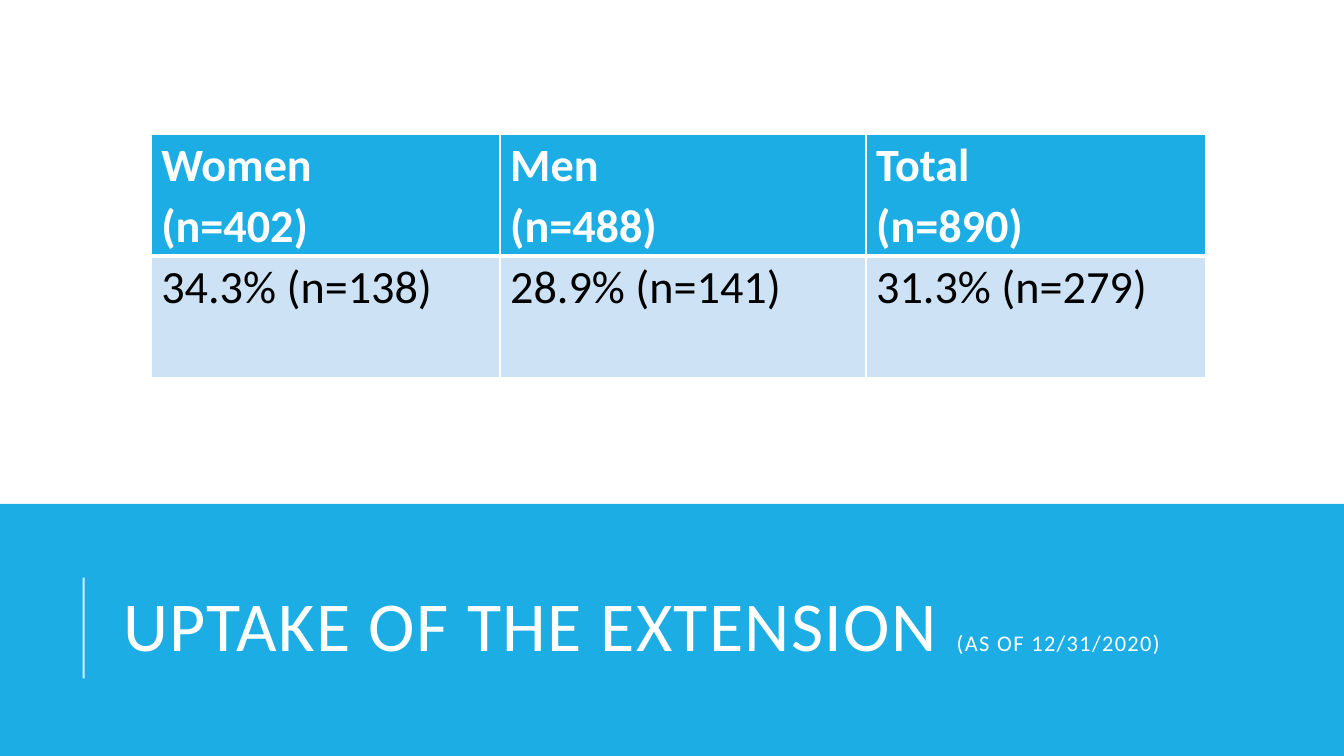
from lxml import etree
from pptx import Presentation
from pptx.dml.color import RGBColor
from pptx.enum.shapes import MSO_CONNECTOR, MSO_SHAPE
from pptx.enum.text import MSO_ANCHOR, PP_ALIGN
from pptx.oxml import parse_xml
from pptx.oxml.ns import nsdecls, qn
from pptx.util import Inches, Pt

RECTANGLE = MSO_SHAPE.RECTANGLE
STRAIGHT = MSO_CONNECTOR.STRAIGHT
MIDDLE = MSO_ANCHOR.MIDDLE
LEFT = PP_ALIGN.LEFT
TITLE_ONLY = 5

COLORS = {"blue": "1CADE4", "pale": "CDE3F5", "white": "FFFFFF", "black": "000000"}
HEADER = {"fill": "blue", "color": "white", "bold": True, "borders": {"L": 1, "R": 1, "T": 1, "B": 3}}
BODY = {"fill": "pale", "color": "black", "bold": False, "borders": {"L": 1, "R": 1, "T": 3, "B": 1}}
COLUMN_WIDTHS = [3.46, 3.63, 3.37]
ROW_HEIGHT = 1.21
UPTAKE_ROWS = [
    (HEADER, [["Women", "(n=402)"], ["Men", "(n=488)"], ["Total", "(n=890)"]]),
    (BODY, [["34.3% (n=138)"], ["28.9% (n=141)"], ["31.3% (n=279)"]]),
]


class SlideBuilder:
    """Holds the style and the current slide, and adds elements to it."""

    font_name = "Calibri"

    def __init__(self, presentation):
        self.slide = presentation.slides.add_slide(presentation.slide_layouts[TITLE_ONLY])

    def color(self, name):
        return RGBColor.from_string(COLORS[name])

    def apply(self, target, values):
        for name, value in values.items():
            setattr(target, name, value)

    def run(self, paragraph, text, size, color, bold=False):
        run = paragraph.add_run()
        run.text = text
        self.apply(run.font, {"name": self.font_name, "size": Pt(size), "bold": bold})
        run.font.color.rgb = self.color(color)
        return run

    def place(self, shape, left, top, width, height):
        self.apply(shape, {"left": Inches(left), "top": Inches(top),
                           "width": Inches(width), "height": Inches(height)})

    def band(self, left, top, width, height, fill):
        shape = self.slide.shapes.add_shape(
            RECTANGLE, Inches(left), Inches(top), Inches(width), Inches(height))
        shape.shadow.inherit = False
        shape.fill.solid()
        shape.fill.fore_color.rgb = self.color(fill)
        shape.line.fill.background()
        self.slide.shapes.title.element.addprevious(shape.element)

    def title(self, left, top, width, height, parts):
        title = self.slide.shapes.title
        self.place(title, left, top, width, height)
        self.apply(title.text_frame, {"vertical_anchor": MIDDLE, "word_wrap": True})
        paragraph = title.text_frame.paragraphs[0]
        self.apply(paragraph, {"alignment": LEFT, "line_spacing": 0.8})
        for text, size in parts:
            run = self.run(paragraph, text, size, "white")
            run.font._element.set("spc", "100")

    def rule(self, x, start, end, color, width, opacity):
        connector = self.slide.shapes.add_connector(
            STRAIGHT, Inches(x), Inches(start), Inches(x), Inches(end))
        connector.line.width = Pt(width)
        connector.line.color.rgb = self.color(color)
        properties = connector.element.spPr
        fill = properties.find(".//" + qn("a:srgbClr"))
        etree.SubElement(fill, qn("a:alpha"), val=str(opacity * 1000))
        etree.SubElement(properties, qn("a:effectLst"))

    def borders(self, cell, widths):
        properties = cell._tc.get_or_add_tcPr()
        for side, width in widths.items():
            properties.append(parse_xml(
                f'<a:ln{side} {nsdecls("a")} w="{Pt(width)}"><a:solidFill>'
                f'<a:srgbClr val="{COLORS["white"]}"/></a:solidFill></a:ln{side}>'))

    def cell(self, cell, lines, style):
        self.apply(cell, {"margin_left": Inches(0.1), "margin_right": Inches(0.1),
                          "margin_top": 0, "margin_bottom": 0})
        self.borders(cell, style["borders"])
        cell.fill.solid()
        cell.fill.fore_color.rgb = self.color(style["fill"])
        for index, line in enumerate(lines):
            frame = cell.text_frame
            paragraph = frame.add_paragraph() if index else frame.paragraphs[0]
            paragraph.line_spacing = 1.07
            self.run(paragraph, line, 33, style["color"], style["bold"])

    def table(self, left, top, widths, row_height, rows):
        table = self.slide.shapes.add_table(
            len(rows), len(widths), Inches(left), Inches(top),
            Inches(sum(widths)), Inches(row_height * len(rows))).table
        for column, width in zip(table.columns, widths):
            column.width = Inches(width)
        for row, (style, texts) in zip(table.rows, rows):
            row.height = Inches(row_height)
            for cell, lines in zip(row.cells, texts):
                self.cell(cell, lines, style)


def main():
    presentation = Presentation()
    presentation.slide_width = Inches(13.33)
    presentation.slide_height = Inches(7.5)
    builder = SlideBuilder(presentation)
    builder.band(0, 5, 13.33, 2.5, "blue")
    builder.title(1.12, 5.44, 10.63, 1.64,
                  [("UPTAKE OF THE EXTENSION ", 50), ("(AS OF 12/31/2020)", 16)])
    builder.rule(0.83, 6.73, 5.73, "white", 1.5, 80)
    builder.table(1.5, 1.33, COLUMN_WIDTHS, ROW_HEIGHT, UPTAKE_ROWS)
    presentation.save("out.pptx")


if __name__ == "__main__":
    main()
